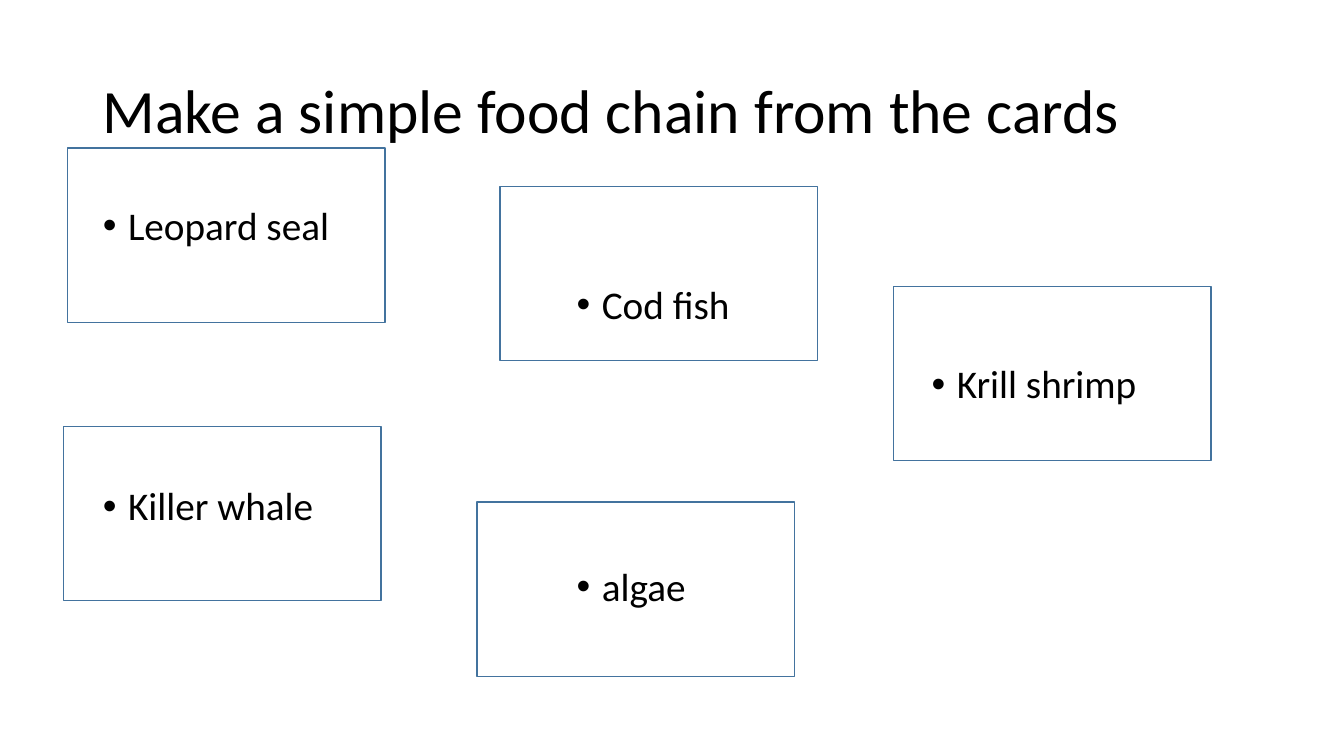
from lxml import etree
from pptx import Presentation
from pptx.dml.color import RGBColor
from pptx.enum.shapes import MSO_SHAPE
from pptx.enum.text import MSO_ANCHOR, PP_ALIGN
from pptx.oxml.ns import qn
from pptx.util import Inches, Pt

RECTANGLE = MSO_SHAPE.RECTANGLE
TOP, MIDDLE = MSO_ANCHOR.TOP, MSO_ANCHOR.MIDDLE
LEFT = PP_ALIGN.LEFT

TITLE = "Make a simple food chain from the cards"
# Animal or plant, card left and top, label left and top
CARDS = [
    ("Leopard seal", (0.67, 1.47), (1.02, 2.05)),
    ("Killer whale", (0.63, 4.23), (1.02, 4.83)),
    ("algae", (4.73, 4.98), (5.72, 5.63)),
    ("Cod fish", (4.96, 1.85), (5.72, 2.83)),
    ("Krill shrimp", (8.86, 2.84), (9.24, 3.62)),
]
CARD_WIDTH, CARD_HEIGHT = 3.15, 1.73
BULLET_INDENT = 0.25
FONT = "Calibri"
COLORS = {"text": "000000", "outline": "43739E"}


def color(name):
    return RGBColor.from_string(COLORS[name])


def write_line(frame, text, size):
    para = frame.paragraphs[0]
    para.text = text
    para.alignment = LEFT
    para.line_spacing = 0.9
    para.font.name = FONT
    para.font.size = Pt(size)
    para.font.color.rgb = color("text")


def add_bullet(para):
    properties = para._p.get_or_add_pPr()
    properties.set("marL", str(Inches(BULLET_INDENT)))
    properties.set("indent", str(-Inches(BULLET_INDENT)))
    etree.SubElement(properties, qn("a:buFont"), typeface="Arial")
    etree.SubElement(properties, qn("a:buChar"), char="•")


def add_title(page):
    box = page.shapes.add_textbox(Inches(0.92), Inches(0.4), Inches(11.5), Inches(1.45))
    frame = box.text_frame
    frame.word_wrap = True
    frame.vertical_anchor = MIDDLE
    write_line(frame, TITLE, 44)


def add_card(page, name, corner, label):
    """Draw a card whose insets bring its bulleted name to the label position."""
    left, top = corner
    card = page.shapes.add_shape(
        RECTANGLE, Inches(left), Inches(top), Inches(CARD_WIDTH), Inches(CARD_HEIGHT)
    )
    card.shadow.inherit = False
    card.fill.background()
    card.line.color.rgb = color("outline")
    card.line.width = Pt(1)
    frame = card.text_frame
    frame.word_wrap = True
    frame.vertical_anchor = TOP
    frame.margin_left = Inches(label[0] - left)
    frame.margin_top = Inches(label[1] - top)
    frame.margin_right = frame.margin_bottom = 0
    add_bullet(frame.paragraphs[0])
    write_line(frame, name, 28)


def main():
    deck = Presentation()
    deck.slide_width, deck.slide_height = Inches(13.33), Inches(7.5)
    page = deck.slides.add_slide(deck.slide_layouts[6])
    add_title(page)
    for name, corner, label in CARDS:
        add_card(page, name, corner, label)
    deck.save("out.pptx")


if __name__ == "__main__":
    main()
